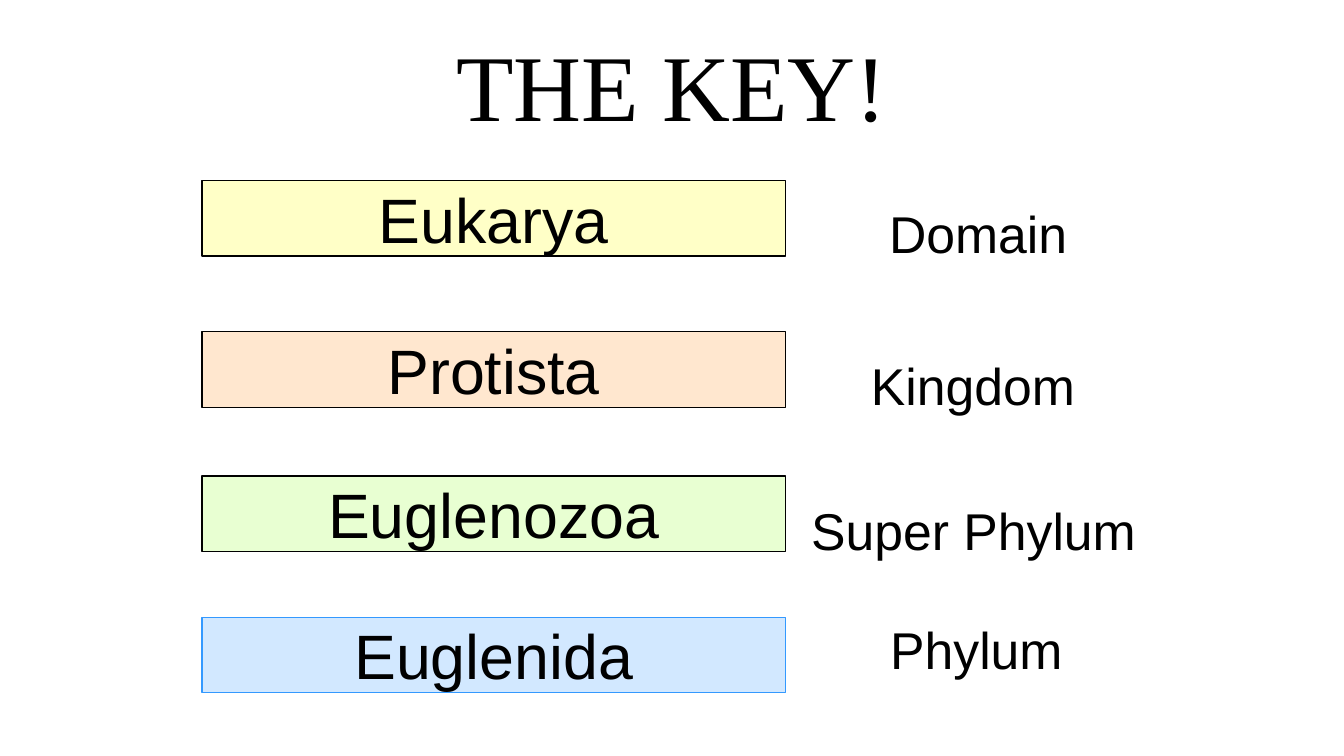
from lxml.etree import SubElement
from pptx import Presentation
from pptx.dml.color import RGBColor
from pptx.enum.shapes import MSO_SHAPE
from pptx.enum.text import MSO_ANCHOR, MSO_AUTO_SIZE, PP_ALIGN
from pptx.oxml.ns import qn
from pptx.util import Pt


def rgb(value):
    return RGBColor.from_string(value)


def write(tf, text, size, font="Arial", color="000000", align=PP_ALIGN.LEFT,
          anchor=MSO_ANCHOR.TOP, wrap=True, insets=(7.2, 3.6),
          fit=MSO_AUTO_SIZE.SHAPE_TO_FIT_TEXT):
    """Fill a text frame with one formatted paragraph."""
    tf.margin_left = tf.margin_right = Pt(insets[0])
    tf.margin_top = tf.margin_bottom = Pt(insets[1])
    tf.word_wrap = wrap
    tf.auto_size = fit
    tf.vertical_anchor = anchor
    p = tf.paragraphs[0]
    p.alignment = align
    r = p.add_run()
    r.text = text
    r.font.size = Pt(size)
    r.font.name = font
    r.font.color.rgb = rgb(color)


class KeySlide:
    bar_left, bar_width, bar_height = 128.9, 372.2, 48.2
    label_height = 47.5

    def __init__(self, prs):
        self.s = prs.slides.add_slide(prs.slide_layouts[5])

    def title(self, text):
        sp = self.s.shapes.title
        sp.left, sp.top, sp.width, sp.height = map(Pt, (156.2, 13, 545, 80.6))
        write(sp.text_frame, text, 60, font="Times New Roman",
              align=PP_ALIGN.CENTER, anchor=MSO_ANCHOR.MIDDLE,
              insets=(6.5, 3.6), fit=MSO_AUTO_SIZE.NONE)

    def bar(self, text, top, fill, opacity, line):
        sp = self.s.shapes.add_shape(
            MSO_SHAPE.RECTANGLE, Pt(self.bar_left), Pt(top),
            Pt(self.bar_width), Pt(self.bar_height))
        sp.shadow.inherit = False
        sp.fill.solid()
        sp.fill.fore_color.rgb = rgb(fill)
        color = sp.fill._xPr.find(qn("a:solidFill"))[0]
        SubElement(color, qn("a:alpha")).set("val", str(opacity * 1000))
        sp.line.color.rgb = rgb(line)
        sp.line.width = Pt(0.75)
        write(sp.text_frame, text, 40, align=PP_ALIGN.CENTER, insets=(0, 0))

    def label(self, text, left, top, width):
        sp = self.s.shapes.add_textbox(
            Pt(left), Pt(top), Pt(width), Pt(self.label_height))
        write(sp.text_frame, text, 33, wrap=False)


# Taxon, bar top, fill, opacity in percent, line
BARS = [
    ("Eukarya", 115.2, "FFFF00", 22, "000000"),
    ("Protista", 211.7, "FF9933", 23, "000000"),
    ("Euglenozoa", 303.8, "99FF33", 22, "000000"),
    ("Euglenida", 393.8, "3399FF", 22, "3399FF"),
]
# Rank, left, top, width
LABELS = [
    ("Domain", 560.2, 125.3, 129.6),
    ("Kingdom", 548.6, 222.5, 146.2),
    ("Super Phylum", 510.5, 314.6, 223.9),
    ("Phylum", 560.9, 391, 126),
]


def main():
    prs = Presentation()
    prs.slide_width, prs.slide_height = Pt(857.5), Pt(482.4)
    key = KeySlide(prs)
    key.title("THE KEY!")
    # Each taxon with its rank beside it
    for bar, label in zip(BARS, LABELS):
        key.bar(*bar)
        key.label(*label)
    prs.save("out.pptx")


if __name__ == "__main__":
    main()
